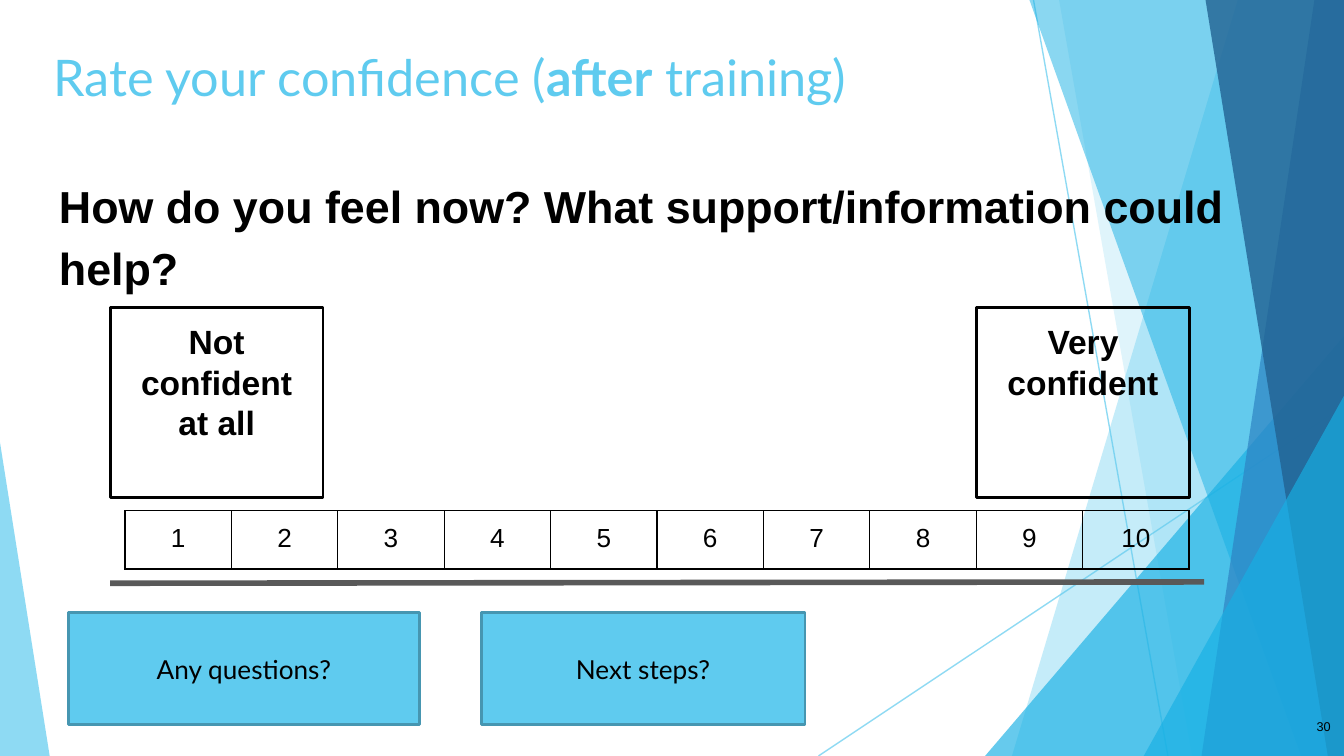
from collections import namedtuple

from lxml import etree
from pptx import Presentation
from pptx import util as u
from pptx.dml.color import RGBColor
from pptx.enum import shapes, text
from pptx.oxml import ns

SKY = RGBColor(0x5F, 0xCB, 0xEF)
CYAN = RGBColor(0x17, 0xB0, 0xE4)
BLUE = RGBColor(0x2E, 0x83, 0xC3)
NAVY = RGBColor(0x22, 0x62, 0x92)
TEAL = RGBColor(0x46, 0x96, 0xB1)
GREY = RGBColor(0x59, 0x59, 0x59)
BLACK = RGBColor(0, 0, 0)

# The slide is a grid of 100 columns by 56.25 rows; all lengths are in cells.
COLUMNS, ROWS = 100, 56.25
CELL = u.Inches(0.1)
INSET = CELL

Box = namedtuple("Box", "left top width height")


def cells(*lengths):
    return [round(length * CELL) for length in lengths]


def set_alpha(fill_parent, percent):
    color = fill_parent.find(".//" + ns.qn("a:srgbClr"))
    etree.SubElement(color, ns.qn("a:alpha"), val=str(percent * 1000))


def add_line(slide, start, end, color, points, alpha=100):
    line = slide.shapes.add_connector(
        shapes.MSO_CONNECTOR.STRAIGHT, *cells(*start, *end))
    line.line.color.rgb = color
    line.line.width = u.Pt(points)
    properties = line._element.spPr
    etree.SubElement(properties, ns.qn("a:effectLst"))
    if alpha < 100:
        set_alpha(properties, alpha)


def paint_facet(facet, color, alpha):
    facet.shadow.inherit = False
    facet.fill.solid()
    facet.fill.fore_color.rgb = color
    set_alpha(facet._element.spPr, alpha)
    facet.line.fill.background()


def add_sliver(slide, box, top_x, bottom_x, color, alpha):
    """Fill the box from a slanted edge to its right side."""
    right, bottom = box.left + box.width, box.top + box.height
    outline = slide.shapes.build_freeform(
        *cells(box.left + top_x, box.top), scale=1.0)
    corners = [(right, box.top), (right, bottom), (box.left + bottom_x, bottom)]
    outline.add_line_segments([cells(*corner) for corner in corners])
    paint_facet(outline.convert_to_shape(), color, alpha)


def add_wedge(slide, box, apex, color, alpha):
    """Add a right triangle with its apex at the given share of the width."""
    wedge = slide.shapes.add_shape(
        shapes.MSO_SHAPE.ISOSCELES_TRIANGLE, *cells(*box))
    wedge.adjustments[0] = apex
    paint_facet(wedge, color, alpha)


def add_corner_wedge(slide, box, width, height):
    right, bottom = box.left + box.width, box.top + box.height
    corner = Box(right - width, bottom - height, width, height)
    add_wedge(slide, corner, 1, CYAN, 66)


def add_facets(slide, box):
    x, y, bottom = box.left, box.top, box.top + box.height
    add_line(slide, (x + 16.9, y), (x + 26.9, bottom), SKY, 0.75, 70)
    add_line(slide, (x + box.width, y + 30.2), (x + 0.9, bottom), SKY, 0.75, 70)
    add_sliver(slide, box, 32.1, 15.3, SKY, 36)
    add_sliver(slide, box, 18.8, 28.7, SKY, 20)
    add_corner_wedge(slide, box, 26.7, 31.25)
    add_sliver(slide, box, 16.6, 36.8, CYAN, 50)
    add_sliver(slide, box, 37.8, 29.4, BLUE, 70)
    add_sliver(slide, box, 29.7, 38.8, NAVY, 80)
    add_corner_wedge(slide, box, 14.9, 26.8)


def format_text(frame, font, size, color=BLACK, bold=False, align=None,
                anchor=text.MSO_ANCHOR.TOP, inset=INSET):
    frame.word_wrap = True
    frame.vertical_anchor = anchor
    frame.margin_left = frame.margin_right = inset
    frame.margin_top = frame.margin_bottom = inset
    for paragraph in frame.paragraphs:
        paragraph.alignment = align
        for run in paragraph.runs:
            run.font.name = font
            run.font.size = u.Pt(size)
            run.font.color.rgb = color
            run.font.bold = bold


def add_title(slide, box):
    frame = slide.shapes.add_textbox(*cells(*box)).text_frame
    for part in ("Rate your confidence (", "after", " training)"):
        frame.paragraphs[0].add_run().text = part
    format_text(frame, "Lato", 27, SKY)
    frame.paragraphs[0].runs[1].font.bold = True


def add_page_number(slide, box):
    frame = slide.shapes.add_textbox(*cells(*box)).text_frame
    frame.text = "30"
    format_text(frame, "Arial", 6.8, align=text.PP_ALIGN.RIGHT,
                anchor=text.MSO_ANCHOR.MIDDLE)


def add_question(slide, box):
    frame = slide.shapes.add_textbox(*cells(*box)).text_frame
    frame.text = "How do you feel now? What support/information could help?"
    format_text(frame, "Arial", 24, bold=True)
    frame.paragraphs[0].line_spacing = 1.15


def add_panel(slide, box, wording, line_color):
    panel = slide.shapes.add_shape(shapes.MSO_SHAPE.RECTANGLE, *cells(*box))
    panel.shadow.inherit = False
    panel.fill.background()
    panel.line.color.rgb = line_color
    panel.line.width = u.Pt(1.5)
    panel.text_frame.text = wording
    return panel


def add_end_label(slide, box, wording):
    label = add_panel(slide, box, wording, BLACK)
    format_text(label.text_frame, "Arial", 18, bold=True,
                align=text.PP_ALIGN.CENTER)


def add_button(slide, box, wording):
    button = add_panel(slide, box, wording, TEAL)
    button.fill.solid()
    button.fill.fore_color.rgb = SKY
    format_text(button.text_frame, "Lato", 14, align=text.PP_ALIGN.CENTER,
                anchor=text.MSO_ANCHOR.MIDDLE, inset=CELL // 2)


def outline_cell(cell):
    properties = cell._tc.get_or_add_tcPr()
    for position, side in enumerate(("lnL", "lnR", "lnT", "lnB")):
        border = etree.Element(ns.qn("a:" + side), w=str(u.Pt(0.75)))
        fill = etree.SubElement(border, ns.qn("a:solidFill"))
        etree.SubElement(fill, ns.qn("a:srgbClr"), val=str(BLACK))
        properties.insert(position, border)


def add_score_row(slide, box, scores):
    table = slide.shapes.add_table(1, scores, *cells(*box)).table
    table.first_row = table.horz_banding = False
    for score, cell in enumerate(table.iter_cells(), start=1):
        cell.text = str(score)
        cell.fill.background()
        cell.margin_left = cell.margin_right = INSET
        cell.margin_top = cell.margin_bottom = INSET
        outline_cell(cell)
        paragraph = cell.text_frame.paragraphs[0]
        paragraph.alignment = text.PP_ALIGN.CENTER
        font = paragraph.runs[0].font
        font.name, font.size, font.color.rgb = "Arial", u.Pt(14), BLACK


def add_confidence_scale(slide, box):
    scores, step, label_height = 10, 7.92, 14.1
    row_left, bottom = box.left + 1.1, box.top + box.height
    add_line(slide, (box.left, bottom), (box.left + box.width, bottom - 0.1),
             GREY, 3)
    high_left = row_left + (scores - 2) * step
    for left, wording in ((box.left, "Not confident at all"),
                          (high_left, "Very confident")):
        add_end_label(slide, Box(left, box.top, 2 * step, label_height), wording)
    row = Box(row_left, box.top + label_height + 1, scores * step, 4.2)
    add_score_row(slide, row, scores)


def main():
    deck = Presentation()
    deck.slide_width, deck.slide_height = cells(COLUMNS, ROWS)
    slide = deck.slides.add_slide(deck.slide_layouts[6])
    add_facets(slide, Box(60, 0, 40, ROWS))
    add_wedge(slide, Box(0, 32.9, 3.7, ROWS - 32.9), 0, SKY, 70)
    add_title(slide, Box(3, 2.4, 93.6, 6.3))
    add_page_number(slide, Box(94, 51.9, 6, 4.3))
    add_question(slide, Box(3.4, 11.7, 93.2, 38.3))
    add_confidence_scale(slide, Box(8.2, 22.9, 81.4, 20.5))
    add_button(slide, Box(5.1, 45.6, 26.1, 8.3), "Any questions?")
    add_button(slide, Box(35.8, 45.6, 24.1, 8.3), "Next steps?")
    deck.save("out.pptx")


if __name__ == "__main__":
    main()
